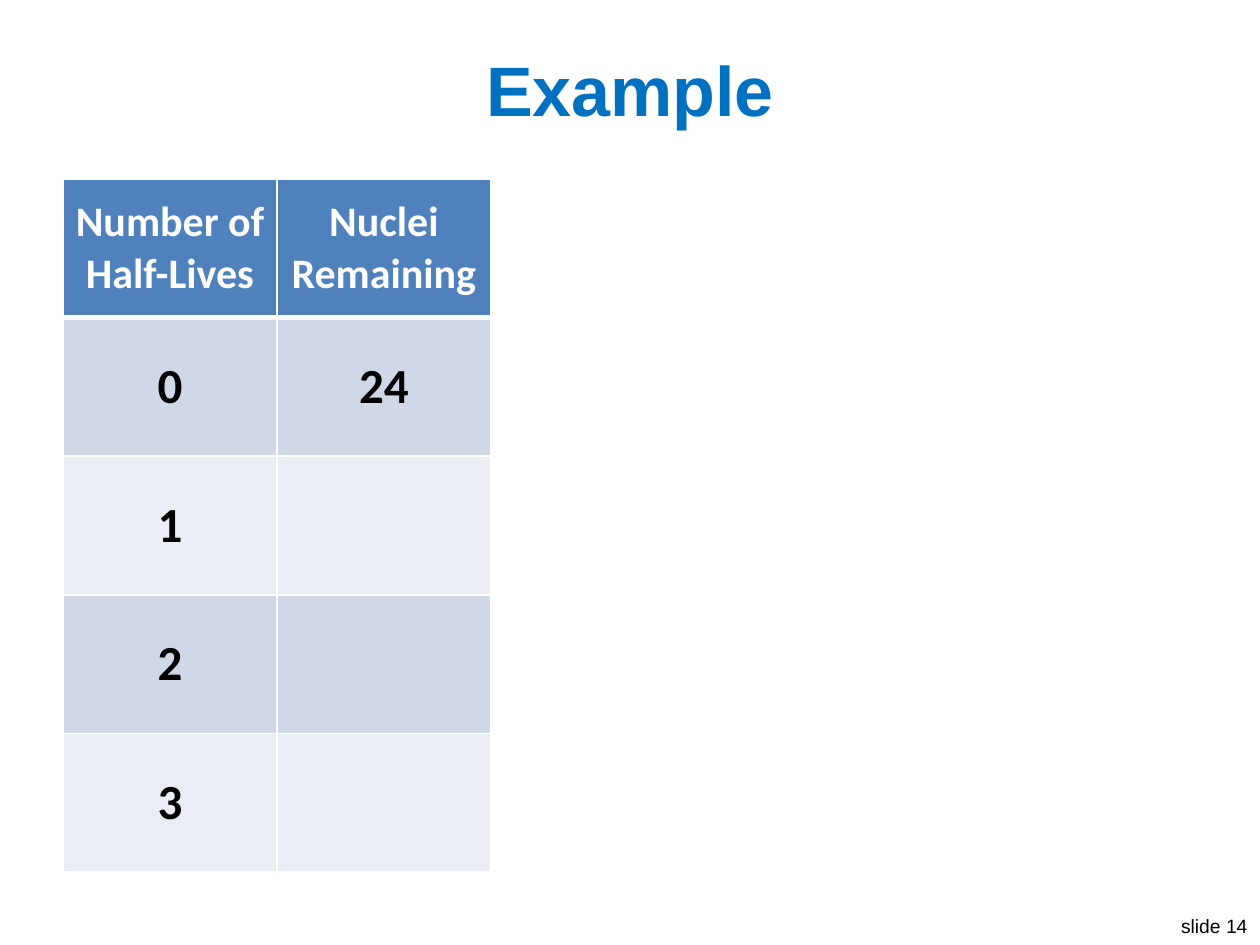
import lxml.etree
import pptx
import pptx.dml.color
import pptx.enum.text
import pptx.oxml.ns
import pptx.util

THEME = {
    "title": ("Arial", 40, True, "0070C0"),
    "footer": ("Arial", 11, False, "000000"),
    "header": ("Calibri", 24, True, "FFFFFF"),
    "body": ("Calibri", 28, True, "000000"),
    "header_fill": "4F81BD",
    "band_fills": ("E9EDF4", "D0D8E8"),
    "border": "FFFFFF",
}
ALIGN = pptx.enum.text.PP_ALIGN
MIDDLE = pptx.enum.text.MSO_ANCHOR.MIDDLE


def px(length):
    return round(length * 914400 / 126)


def write(frame, text, style, align):
    para = frame.paragraphs[0]
    para.alignment = align
    span = para.add_run()
    span.text = text
    name, size, bold, color = THEME[style]
    span.font.name = name
    span.font.size = pptx.util.Pt(size)
    span.font.bold = bold
    span.font.color.rgb = pptx.dml.color.RGBColor.from_string(color)


deck = pptx.Presentation()
deck.slide_width = px(1260)
deck.slide_height = px(945)
page = deck.slides.add_slide(deck.slide_layouts[6])

footer = page.shapes.add_textbox(px(1166), px(908), px(94), px(36))
footer.text_frame.word_wrap = False
write(footer.text_frame, "slide 14", "footer", ALIGN.RIGHT)

title = page.shapes.add_textbox(px(25), px(38), px(1210), px(101))
title.text_frame.word_wrap = True
title.text_frame.vertical_anchor = MIDDLE
write(title.text_frame, "Example", "title", ALIGN.CENTER)

rows = [
    ("Number of Half-Lives", "Nuclei Remaining"),
    ("0", "24"),
    ("1", ""),
    ("2", ""),
    ("3", ""),
]
table = page.shapes.add_table(len(rows), 2, px(63), px(179), px(428), px(693)).table

for row_index, row in enumerate(rows):
    is_header = row_index == 0
    style = "header" if is_header else "body"
    fill = THEME["header_fill"] if is_header else THEME["band_fills"][row_index % 2]
    for column_index, text in enumerate(row):
        cell = table.cell(row_index, column_index)
        cell.vertical_anchor = MIDDLE
        properties = cell._tc.get_or_add_tcPr()
        for side in ("L", "R", "T", "B"):
            thick = (side == "B" and is_header) or (side == "T" and row_index == 1)
            line = lxml.etree.SubElement(properties, pptx.oxml.ns.qn("a:ln" + side))
            line.set("w", str(pptx.util.Pt(3 if thick else 1)))
            paint = lxml.etree.SubElement(line, pptx.oxml.ns.qn("a:solidFill"))
            color = lxml.etree.SubElement(paint, pptx.oxml.ns.qn("a:srgbClr"))
            color.set("val", THEME["border"])
        cell.fill.solid()
        cell.fill.fore_color.rgb = pptx.dml.color.RGBColor.from_string(fill)
        if text:
            write(cell.text_frame, text, style, ALIGN.CENTER)

deck.save("out.pptx")
